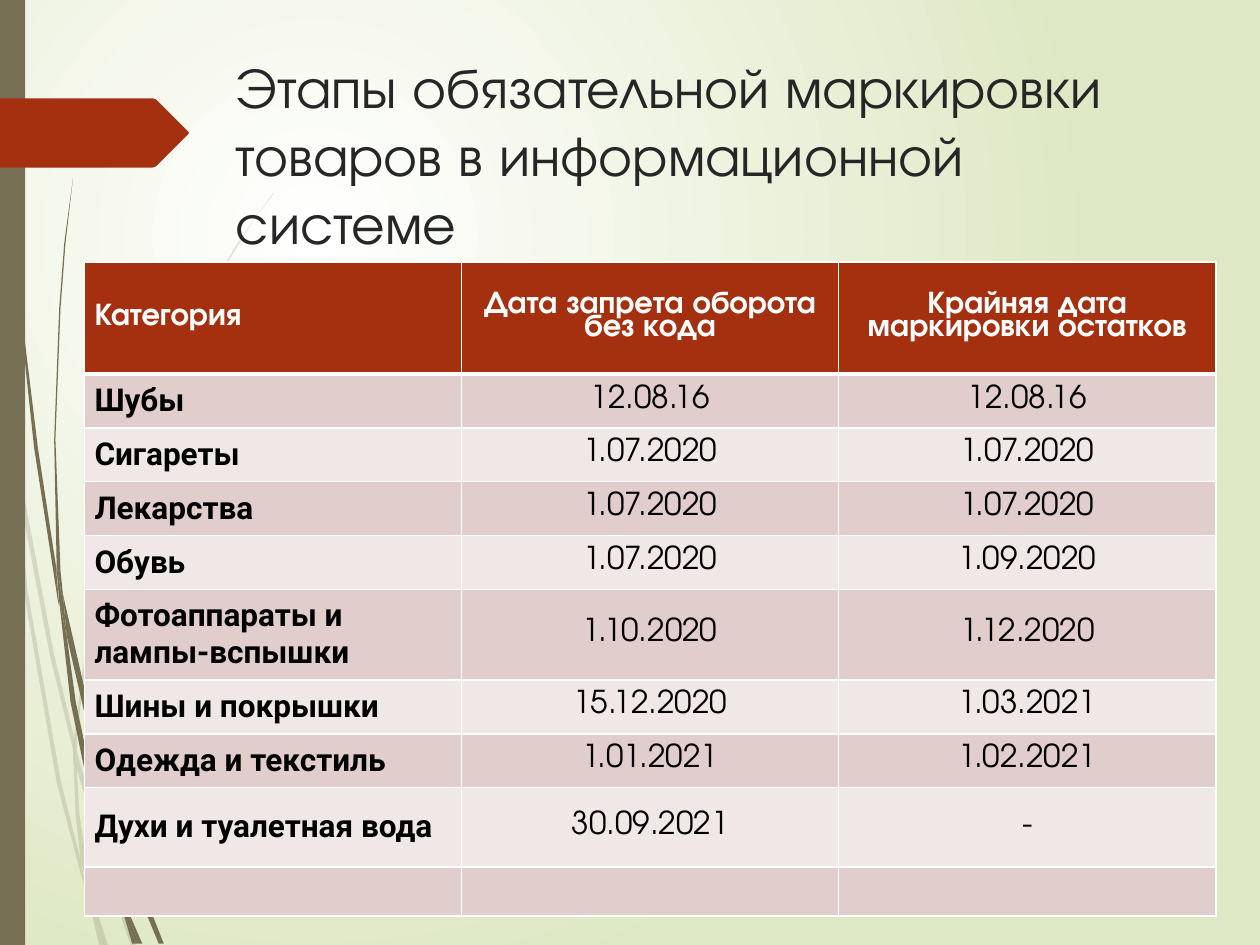
from dataclasses import dataclass
from typing import Optional

from lxml import etree
from pptx import Presentation
from pptx import util as u
from pptx.dml.color import RGBColor
from pptx.enum import shapes, text
from pptx.oxml.ns import qn

OLIVE = RGBColor(0x76, 0x6F, 0x54)
RUST = RGBColor(0xA5, 0x30, 0x10)
WHITE = RGBColor(0xFF, 0xFF, 0xFF)
BLACK = RGBColor(0, 0, 0)
PALE_GREEN = RGBColor(0xDF, 0xE8, 0xC4)
TITLE_GREY = RGBColor(0x26, 0x26, 0x26)
BANDS = (RGBColor(0xE1, 0xCD, 0xCC), RGBColor(0xF0, 0xE8, 0xE7))
MAIN_FONT, CATEGORY_FONT = "TeX Gyre Adventor", "Roboto"


@dataclass
class Outline:
    """A closed filled outline; points are in inches."""
    points: list
    colour: RGBColor = OLIVE
    opacity: Optional[int] = None


@dataclass
class Stage:
    category: str
    ban_date: str
    stock_date: str
    height: float = 0.42


FAINT_STEMS = [
    [(0.08, 3.5), (0.06, 3.22), (0, 2.82), (0, 2.99), (0.07, 3.44)],
    [(0.4, 5.22), (0.59, 5.99), (0.59, 5.86), (0.43, 5.2), (0.1, 3.45), (0.12, 3.76)],
    [(0.64, 6.07), (0.61, 5.96), (0.61, 6.1), (0.85, 6.94), (1.04, 7.51), (1.08, 7.51),
     (0.88, 6.92)],
    [(0.83, 7.51), (0.86, 7.51), (0.73, 7.11)],
    [(0.64, 6.83), (0.48, 6.19), (0.22, 4.69), (0.12, 3.76), (0.08, 3.5), (0.19, 4.7),
     (0.45, 6.21), (0.64, 6.93), (0.7, 7.14), (0.69, 7.07)],
    [(0.58, 5.99), (0.6, 6.46), (0.64, 6.83), (0.67, 6.92), (0.73, 7.11), (0.72, 7.06),
     (0.63, 6.46), (0.61, 6.1), (0.61, 6.08)],
    [(0.61, 5.84), (0.76, 4.62), (1.11, 3.49), (1.59, 2.45), (1.87, 1.98), (2.01, 1.75),
     (2.17, 1.54), (2.17, 1.53), (2.01, 1.75), (1.86, 1.97), (1.58, 2.44), (1.1, 3.48),
     (0.75, 4.61), (0.59, 5.84), (0.59, 5.86), (0.61, 5.96)],
    [(0.7, 7.14), (0.79, 7.51), (0.82, 7.51)],
    [(0.61, 6.08), (0.61, 6.1), (0.61, 5.96), (0.59, 5.86), (0.58, 5.99)],
    [(0.67, 6.92), (0.65, 6.83), (0.69, 7.07), (0.7, 7.14), (0.82, 7.51), (0.83, 7.51),
     (0.73, 7.11)],
]
SOLID_STEMS = [
    [(0.05, 1.1), (0.14, 2.33), (0.27, 3.55), (0.46, 4.77), (0.47, 4.81), (0.45, 4.57),
     (0.45, 4.53), (0.3, 3.55), (0.15, 2.32), (0.06, 1.09), (0.04, 0.48), (0.03, 0),
     (0.02, 0), (0.03, 0.48)],
    [(0.73, 5.92), (0.88, 6.45), (0.88, 6.33), (0.88, 6.31), (0.77, 5.9), (0.5, 4.72),
     (0.53, 5.05)],
    [(0.94, 6.49), (0.91, 6.41), (0.91, 6.56), (1.09, 7.08), (1.26, 7.49), (1.3, 7.49),
     (1.13, 7.06)],
    [(0.91, 6.91), (0.81, 6.57), (0.6, 5.56), (0.53, 5.05), (0.47, 4.77), (0.56, 5.57),
     (0.77, 6.59), (0.92, 7.08), (0.97, 7.22), (0.96, 7.17)],
    [(0.5, 4.72), (0.48, 4.53), (0.44, 3.49), (0.48, 2.45), (0.52, 1.93), (0.58, 1.41),
     (0.51, 1.93), (0.47, 2.45), (0.43, 3.49), (0.45, 4.49), (0.49, 4.72)],
    [(1.1, 7.49), (1.13, 7.49), (1, 7.19)],
    [(0.47, 4.77), (0.53, 5.05), (0.5, 4.72), (0.49, 4.72), (0.45, 4.49), (0.45, 4.53)],
    [(0.91, 6.33), (1.03, 5.52), (1.31, 4.76), (1.69, 4.06), (1.91, 3.74), (2.03, 3.59),
     (2.16, 3.44), (2.15, 3.44), (2.03, 3.58), (1.91, 3.73), (1.68, 4.05), (1.29, 4.74),
     (1.01, 5.51), (0.88, 6.31), (0.91, 6.41)],
    [(0.97, 7.22), (1.05, 7.49), (1.08, 7.49)],
    [(0.88, 6.45), (0.91, 6.91), (0.96, 7.06), (1, 7.19), (1, 7.16), (0.91, 6.56),
     (0.9, 6.51)],
    [(0.88, 6.45), (0.9, 6.51), (0.91, 6.56), (0.91, 6.41), (0.88, 6.31), (0.88, 6.33)],
    [(0.96, 7.06), (0.91, 6.91), (0.96, 7.17), (0.97, 7.22), (1.08, 7.49), (1.1, 7.49),
     (1, 7.19)],
]
ARROW = [(1.49, 1.07), (1.24, 1.32), (1.21, 1.33), (0, 1.33), (0, 0.78), (1.21, 0.78),
         (1.24, 0.79), (1.49, 1.04), (1.5, 1.055)]

STAGES = [
    Stage("Категория", "Дата запрета оборота без кода", "Крайняя дата маркировки остатков", 0.89),
    Stage("Шубы", "12.08.16", "12.08.16"),
    Stage("Сигареты", "1.07.2020", "1.07.2020"),
    Stage("Лекарства", "1.07.2020", "1.07.2020"),
    Stage("Обувь", "1.07.2020", "1.09.2020"),
    Stage("Фотоаппараты и лампы-вспышки", "1.10.2020", "1.12.2020", 0.71),
    Stage("Шины и покрышки", "15.12.2020", "1.03.2021"),
    Stage("Одежда и текстиль", "1.01.2021", "1.02.2021"),
    Stage("Духи и туалетная вода", "30.09.2021", "-", 0.63),
    Stage("", "", "", 0.39),
]


def paint(shape, colour: RGBColor, opacity: Optional[int] = None) -> None:
    shape.shadow.inherit = False
    shape.fill.solid()
    shape.fill.fore_color.rgb = colour
    shape.line.fill.background()
    if opacity is not None:
        solid = shape.element.spPr.find(qn("a:solidFill"))
        etree.SubElement(solid[0], qn("a:alpha"), val=str(opacity * 1000))


def draw_outline(slide, outline: Outline) -> None:
    points = [(u.Inches(x), u.Inches(y)) for x, y in outline.points]
    builder = slide.shapes.build_freeform(*points[0])
    builder.add_line_segments(points[1:], close=True)
    paint(builder.convert_to_shape(), outline.colour, outline.opacity)


def set_font(font, values: dict) -> None:
    for name, value in values.items():
        setattr(font, name, value)


def set_borders(cell, widths: dict) -> None:
    properties = cell._tc.get_or_add_tcPr()
    for index, (side, points) in enumerate(widths.items()):
        line = etree.Element(qn(f"a:{side}"), w=str(u.Pt(points)))
        fill = etree.SubElement(line, qn("a:solidFill"))
        etree.SubElement(fill, qn("a:srgbClr"), val=str(WHITE))
        properties.insert(index, line)


def fill_cell(cell, wording: str, row: int, column: int) -> None:
    header, category = row == 0, column == 0
    cell.fill.solid()
    cell.fill.fore_color.rgb = RUST if header else BANDS[(row - 1) % 2]
    cell.vertical_anchor = text.MSO_ANCHOR.MIDDLE
    cell.margin_left = cell.margin_right = u.Inches(0.08)
    cell.margin_top = cell.margin_bottom = u.Pt(4.8 if wording else 2)
    set_borders(cell, {"lnL": 1, "lnR": 1, "lnT": 3 if row == 1 else 1, "lnB": 3 if header else 1})
    if not wording:
        return
    paragraph = cell.text_frame.paragraphs[0]
    paragraph.alignment = text.PP_ALIGN.LEFT if category else text.PP_ALIGN.CENTER
    if header or not category:
        paragraph.line_spacing = 0.8
    run = paragraph.add_run()
    run.text = wording
    set_font(run.font, {"size": u.Pt(18), "bold": header or category,
                        "name": CATEGORY_FONT if category and not header else MAIN_FONT})
    run.font.color.rgb = WHITE if header else BLACK


def draw_table(slide, stages: list) -> None:
    height = sum(stage.height for stage in stages)
    frame = slide.shapes.add_table(len(stages), 3, u.Inches(0.67), u.Inches(2.08),
                                   u.Inches(8.98), u.Inches(height))
    for row, stage in enumerate(stages):
        frame.table.rows[row].height = u.Inches(stage.height)
        for column, wording in enumerate((stage.category, stage.ban_date, stage.stock_date)):
            fill_cell(frame.table.cell(row, column), wording, row, column)


def set_background(slide) -> None:
    fill = slide.background.fill
    fill.gradient()
    for stop, colour in zip(fill.gradient_stops, (WHITE, PALE_GREEN)):
        stop.color.rgb = colour
    gradient = slide.element.find(".//" + qn("a:gradFill"))
    gradient.remove(gradient.find(qn("a:lin")))
    circle = etree.Element(qn("a:path"), path="circle")
    etree.SubElement(circle, qn("a:fillToRect"), l="50000", t="50000", r="100000", b="100000")
    gradient.find(qn("a:gsLst")).addnext(circle)


def set_title(slide, wording: str) -> None:
    title = slide.shapes.title
    title.left, title.top = u.Inches(1.77), u.Inches(0.36)
    title.width, title.height = u.Inches(7.56), u.Inches(1.72)
    frame = title.text_frame
    frame.text = wording
    frame.word_wrap = True
    frame.auto_size = text.MSO_AUTO_SIZE.NONE
    frame.vertical_anchor = text.MSO_ANCHOR.TOP
    paragraph = frame.paragraphs[0]
    paragraph.alignment = text.PP_ALIGN.LEFT
    font = paragraph.runs[0].font
    set_font(font, {"size": u.Pt(32.4), "name": MAIN_FONT})
    font.color.rgb = TITLE_GREY
    # Bring the title in front of the decoration
    slide.shapes.element.append(title.element)


def main() -> None:
    presentation = Presentation()
    presentation.slide_width, presentation.slide_height = u.Inches(10), u.Inches(7.5)
    slide = presentation.slides.add_slide(presentation.slide_layouts[5])
    set_background(slide)
    # Stems, side bar and arrow
    for points in FAINT_STEMS:
        draw_outline(slide, Outline(points, opacity=20))
    for points in SOLID_STEMS:
        draw_outline(slide, Outline(points))
    bar = slide.shapes.add_shape(shapes.MSO_SHAPE.RECTANGLE, 0, 0, u.Inches(0.2), u.Inches(7.5))
    paint(bar, OLIVE)
    draw_outline(slide, Outline(ARROW, RUST))
    # Title and table
    set_title(slide, "Этапы обязательной маркировки товаров в информационной системе")
    draw_table(slide, STAGES)
    presentation.save("out.pptx")


if __name__ == "__main__":
    main()
